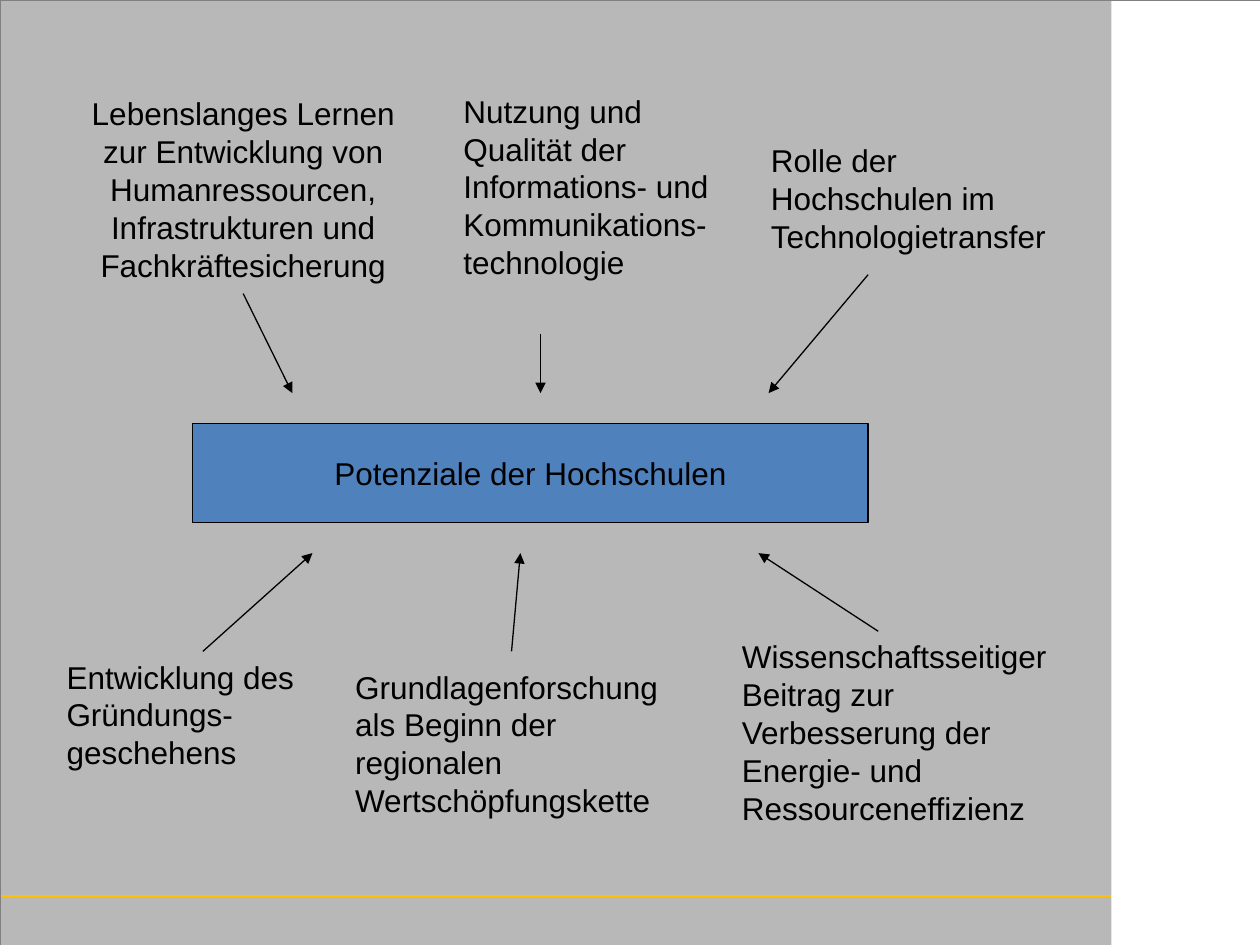
from lxml import etree
from pptx import Presentation, util as u
from pptx.dml.color import RGBColor
from pptx.enum import shapes, text
from pptx.oxml.ns import qn

BLACK = RGBColor(0, 0, 0)
WHITE = RGBColor(255, 255, 255)
GREY = RGBColor(0xB8, 0xB8, 0xB8)
EDGE = RGBColor(0x80, 0x80, 0x80)
BLUE = RGBColor(0x4F, 0x81, 0xBD)
GOLD = RGBColor(0xFF, 0xC0, 0x00)

WIDE, HIGH = 10, 7.5
SIDE = 8.82        # left edge of the white margin
RULE = 7.11        # height of the gold line
CORE = "Potenziale der Hochschulen"
BOX = (1.53, 3.36, 5.36, 0.79)
GAP = 0.24         # between arrow tips and the box
ROW = 0.3          # height of a text line
PAD = 0.1          # top and bottom insets together

# Topic: text, left, top, width, lines, arrow start (x, y), arrow tip x
ABOVE = [
    ("Lebenslanges Lernen zur Entwicklung von Humanressourcen, "
     "Infrastrukturen und Fachkräftesicherung",
     0.59, 0.7, 2.68, 5, (1.93, 2.33), 2.32),
    ("Nutzung und Qualität der Informations- und Kommunikations-technologie",
     3.58, 0.68, 2.2, 5, (4.29, 2.65), 4.29),
    ("Rolle der Hochschulen im Technologietransfer",
     6.02, 1.07, 2.52, 3, (6.89, 2.18), 6.1),
]
BELOW = [
    ("Entwicklung des Gründungs-geschehens",
     0.43, 5.17, 2.13, 3, (1.61, 5.17), 2.48),
    ("Grundlagenforschung als Beginn der regionalen Wertschöpfungskette",
     2.72, 5.25, 2.68, 4, (4.06, 5.17), 4.13),
    ("Wissenschaftsseitiger Beitrag zur Verbesserung der Energie- und "
     "Ressourceneffizienz",
     5.79, 5.01, 2.68, 5, (6.97, 5.01), 6.02),
]

deck = Presentation()
deck.slide_width, deck.slide_height = u.Inches(WIDE), u.Inches(HIGH)
slide = deck.slides.add_slide(deck.slide_layouts[6])
slide.background.fill.solid()
slide.background.fill.fore_color.rgb = GREY


def inch(*vals):
    return [u.Inches(v) for v in vals]


def add_rect(place, fill=None, edge=None, width=0.75):
    rect = slide.shapes.add_shape(shapes.MSO_SHAPE.RECTANGLE, *inch(*place))
    rect.shadow.inherit = False
    if fill is None:
        rect.fill.background()
    else:
        rect.fill.solid()
        rect.fill.fore_color.rgb = fill
    if edge is None:
        rect.line.fill.background()
    else:
        rect.line.color.rgb = edge
        rect.line.width = u.Pt(width)
    return rect


def add_line(start, end, color=BLACK, width=0.75, arrow=True):
    line = slide.shapes.add_connector(
        shapes.MSO_CONNECTOR.STRAIGHT, *inch(*start, *end))
    line.line.color.rgb = color
    line.line.width = u.Pt(width)
    if arrow:
        etree.SubElement(line.line._get_or_add_ln(), qn("a:tailEnd"),
                         type="triangle")
    etree.SubElement(line._element.spPr, qn("a:effectLst"))


def write(shape, words, align, anchor, wrap):
    frame = shape.text_frame
    frame.text = words
    frame.word_wrap = wrap
    frame.vertical_anchor = anchor
    para = frame.paragraphs[0]
    para.alignment = align
    font = para.runs[0].font
    font.name, font.size = "Arial", u.Pt(18)
    font.color.rgb = BLACK


# Page frame
add_rect((SIDE, 0, WIDE - SIDE, HIGH), fill=WHITE)
add_line((0, RULE), (SIDE, RULE), GOLD, 1.5, arrow=False)
add_rect((0, 0, WIDE, HIGH), edge=EDGE, width=0.25)

# Central box
core = add_rect(BOX, BLUE, BLACK)
write(core, CORE, text.PP_ALIGN.CENTER, text.MSO_ANCHOR.MIDDLE, False)

# Topics, each with an arrow towards the box
tips = (BOX[1] - GAP, BOX[1] + BOX[3] + GAP)
for topics, tip in zip((ABOVE, BELOW), tips):
    for words, left, top, width, lines, start, end in topics:
        note = slide.shapes.add_textbox(
            *inch(left, top, width, lines * ROW + PAD))
        first = topics is ABOVE and words == ABOVE[0][0]
        write(note, words,
              text.PP_ALIGN.CENTER if first else text.PP_ALIGN.LEFT,
              text.MSO_ANCHOR.MIDDLE if first else text.MSO_ANCHOR.TOP, True)
        note.text_frame.auto_size = text.MSO_AUTO_SIZE.SHAPE_TO_FIT_TEXT
        add_line(start, (end, tip))

deck.save("out.pptx")
